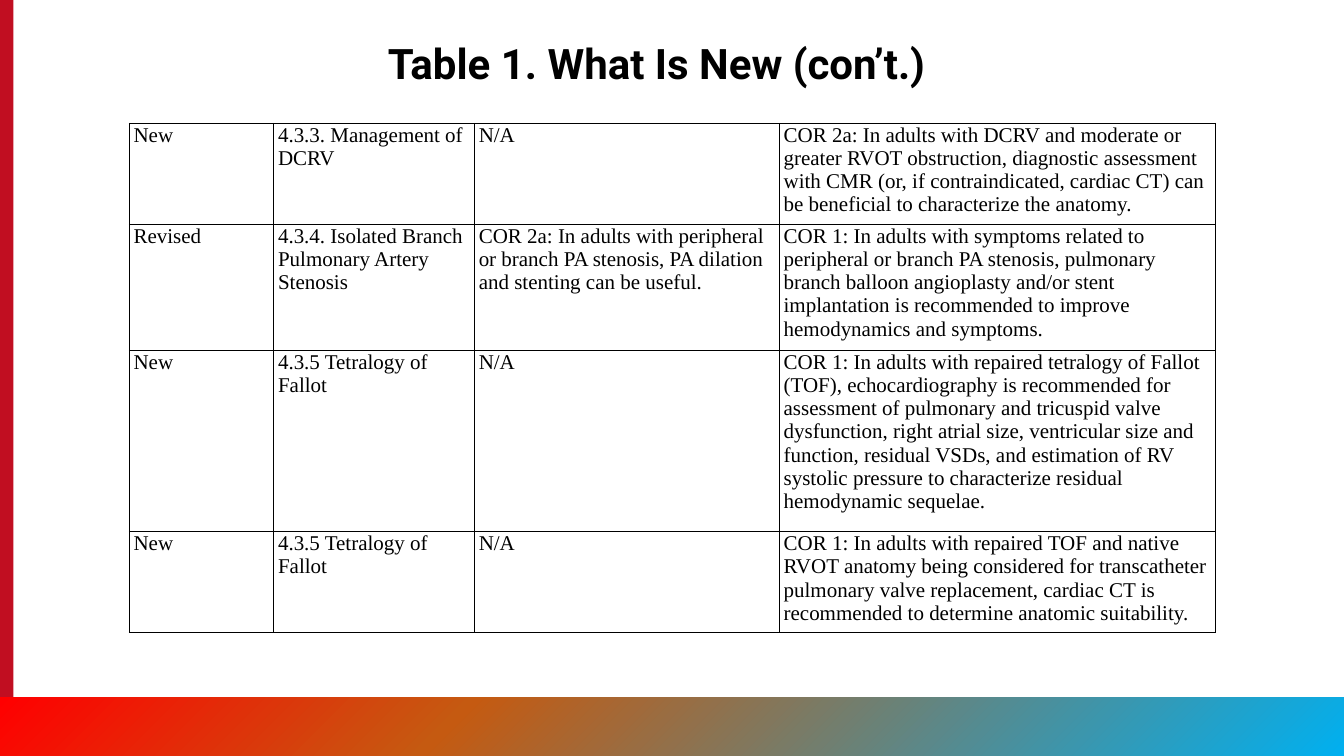
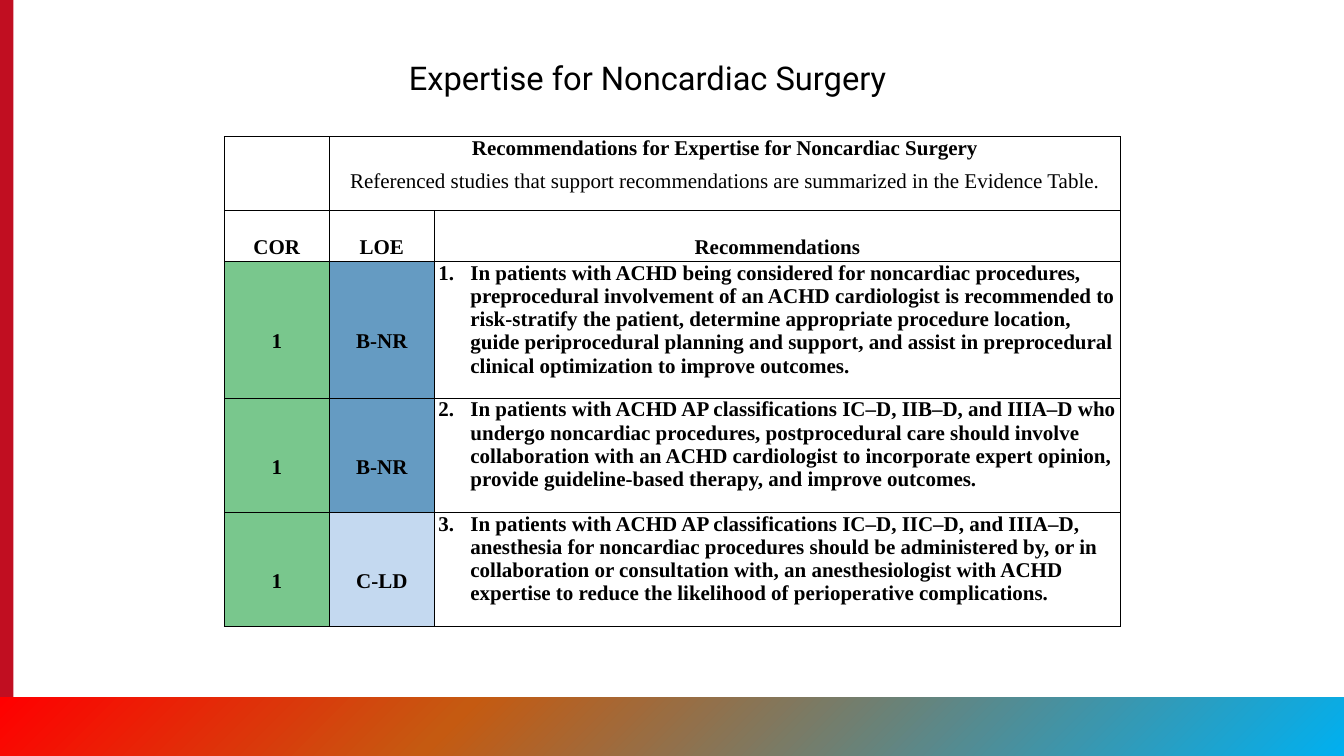
from lxml import etree
from pptx import Presentation
from pptx.dml.color import RGBColor
from pptx.enum.shapes import MSO_SHAPE
from pptx.enum.text import MSO_ANCHOR, MSO_AUTO_SIZE, PP_ALIGN
from pptx.oxml import parse_xml
from pptx.oxml.ns import qn
from pptx.util import Inches, Pt

RECTANGLE = MSO_SHAPE.RECTANGLE
TOP, MIDDLE, BOTTOM = MSO_ANCHOR.TOP, MSO_ANCHOR.MIDDLE, MSO_ANCHOR.BOTTOM
CENTER = PP_ALIGN.CENTER
FIT_SHAPE = MSO_AUTO_SIZE.SHAPE_TO_FIT_TEXT

TITLE_FONT = "Roboto"
TABLE_FONT = "Times New Roman"
BLACK = "000000"
SIDE_RED = "C10E21"
BAND_STOPS = [(0, "00B0F0"), (66, "C55A11"), (100, "FF0000")]
CLASS_GREEN = "79C78D"
LEVEL_COLOURS = {"B-NR": "659BC2", "C-LD": "C4D9F0"}
DRAWING_NS = "http://schemas.openxmlformats.org/drawingml/2006/main"

CHANGES = [
    ("New", "4.3.3. Management of DCRV", "N/A",
     "COR 2a: In adults with DCRV and moderate or greater RVOT obstruction, diagnostic "
     "assessment with CMR (or, if contraindicated, cardiac CT) can be beneficial to "
     "characterize the anatomy."),
    ("Revised", "4.3.4. Isolated Branch Pulmonary Artery Stenosis",
     "COR 2a: In adults with peripheral or branch PA stenosis, PA dilation and stenting "
     "can be useful.",
     "COR 1: In adults with symptoms related to peripheral or branch PA stenosis, "
     "pulmonary branch balloon angioplasty and/or stent implantation is recommended to "
     "improve hemodynamics and symptoms."),
    ("New", "4.3.5 Tetralogy of Fallot", "N/A",
     "COR 1: In adults with repaired tetralogy of Fallot (TOF), echocardiography is "
     "recommended for assessment of pulmonary and tricuspid valve dysfunction, right "
     "atrial size, ventricular size and function, residual VSDs, and estimation of RV "
     "systolic pressure to characterize residual hemodynamic sequelae."),
    ("New", "4.3.5 Tetralogy of Fallot", "N/A",
     "COR 1: In adults with repaired TOF and native RVOT anatomy being considered for "
     "transcatheter pulmonary valve replacement, cardiac CT is recommended to determine "
     "anatomic suitability."),
]

RECOMMENDATIONS = [
    ("1", "B-NR",
     "In patients with ACHD being considered for noncardiac procedures, preprocedural "
     "involvement of an ACHD cardiologist is recommended to risk-stratify the patient, "
     "determine appropriate procedure location, guide periprocedural planning and "
     "support, and assist in preprocedural clinical optimization to improve outcomes."),
    ("1", "B-NR",
     "In patients with ACHD AP classifications IC–D, IIB–D, and IIIA–D who undergo "
     "noncardiac procedures, postprocedural care should involve collaboration with an "
     "ACHD cardiologist to incorporate expert opinion, provide guideline-based therapy, "
     "and improve outcomes."),
    ("1", "C-LD",
     "In patients with ACHD AP classifications IC–D, IIC–D, and IIIA–D, anesthesia for "
     "noncardiac procedures should be administered by, or in collaboration or "
     "consultation with, an anesthesiologist with ACHD expertise to reduce the "
     "likelihood of perioperative complications."),
]


def rgb(colour):
    return RGBColor.from_string(colour)


def style_font(font, name, size, bold):
    font.name, font.size, font.bold = name, Pt(size), bold
    font.color.rgb = rgb(BLACK)


def add_block(slide, left, top, width, height, colour):
    block = slide.shapes.add_shape(
        RECTANGLE, Inches(left), Inches(top), Inches(width), Inches(height))
    block.shadow.inherit = False
    block.line.fill.background()
    block.fill.solid()
    block.fill.fore_color.rgb = rgb(colour)
    return block


def apply_gradient(shape, stops, angle):
    stop_xml = "".join(
        f'<a:gs pos="{percent * 1000}"><a:srgbClr val="{colour}"/></a:gs>'
        for percent, colour in stops)
    gradient = parse_xml(
        f'<a:gradFill xmlns:a="{DRAWING_NS}" rotWithShape="1"><a:gsLst>{stop_xml}'
        f'</a:gsLst><a:lin ang="{angle * 60000}" scaled="0"/></a:gradFill>')
    properties = shape.element.spPr
    properties.replace(properties.find(qn("a:solidFill")), gradient)


def add_branded_slide(prs):
    """Add a blank slide with the red side bar and the gradient footer band."""
    slide = prs.slides.add_slide(prs.slide_layouts[6])
    add_block(slide, 0, 0, 0.16, 9, SIDE_RED)
    footer = add_block(slide, 0, 8.3, 16, 0.7, SIDE_RED)
    footer.rotation = 180
    apply_gradient(footer, BAND_STOPS, 45)
    return slide


def add_title(slide, text, left, top, width, height, size, bold=False, anchor=TOP):
    title = slide.shapes.add_textbox(
        Inches(left), Inches(top), Inches(width), Inches(height))
    frame = title.text_frame
    frame.word_wrap = True
    frame.vertical_anchor = anchor
    frame.text = text
    style_font(frame.paragraphs[0].runs[0].font, TITLE_FONT, size, bold)
    return title


def format_cell(cell, fill=None):
    """Give a cell thin black borders, narrow insets and an optional fill."""
    properties = cell._tc.get_or_add_tcPr()
    for side in ("lnL", "lnR", "lnT", "lnB"):
        border = etree.SubElement(properties, qn(f"a:{side}"), w=str(Pt(1)))
        solid = etree.SubElement(border, qn("a:solidFill"))
        etree.SubElement(solid, qn("a:srgbClr"), val=BLACK)
    cell.margin_left = cell.margin_right = Inches(0.05)
    cell.margin_top = cell.margin_bottom = 0
    if fill:
        cell.fill.solid()
        cell.fill.fore_color.rgb = rgb(fill)
    else:
        cell.fill.background()


def add_grid(slide, left, top, widths, heights):
    table = slide.shapes.add_table(
        len(heights), len(widths), Inches(left), Inches(top),
        Inches(sum(widths)), Inches(sum(heights))).table
    table.first_row = table.horz_banding = False
    for column, width in zip(table.columns, widths):
        column.width = Inches(width)
    for row, height in zip(table.rows, heights):
        row.height = Inches(height)
    return table


def set_indent(paragraph, left, first):
    properties = paragraph._p.get_or_add_pPr()
    properties.set("marL", str(Inches(left)))
    properties.set("indent", str(Inches(first)))
    return properties


def style_paragraph(paragraph, bold=False):
    paragraph.space_after = Pt(8)
    for run in paragraph.runs:
        style_font(run.font, TABLE_FONT, 18, bold)


def center_paragraph(paragraph, bold=True):
    set_indent(paragraph, 0.24, -0.25)
    paragraph.alignment = CENTER
    style_paragraph(paragraph, bold)


def fill_label(cell, text):
    """Write a bold, double-spaced label in the middle of a cell."""
    cell.text = text
    cell.vertical_anchor = MIDDLE
    label = cell.text_frame.paragraphs[0]
    label.line_spacing = 2.0
    center_paragraph(label)


def fill_numbered(cell, text, number):
    cell.text = text
    item = cell.text_frame.paragraphs[0]
    properties = set_indent(item, 0.38, -0.38)
    etree.SubElement(properties, qn("a:buAutoNum"),
                     type="arabicPeriod", startAt=str(number))
    style_paragraph(item, bold=True)


def build_whats_new(prs):
    slide = add_branded_slide(prs)
    add_title(slide, "Table 1. What Is New (con’t.)", 4.52, 0.42, 6.96, 0.67, 36,
              bold=True, anchor=BOTTOM)
    table = add_grid(slide, 1.54, 1.47, [1.72, 2.39, 3.63, 5.19],
                     [1.18, 1.18, 2.16, 1.18])
    for row, change in zip(table.rows, CHANGES):
        for cell, text in zip(row.cells, change):
            format_cell(cell)
            cell.text = text
            style_paragraph(cell.text_frame.paragraphs[0])


def build_expertise(prs):
    slide = add_branded_slide(prs)
    title = add_title(slide, "Expertise for Noncardiac Surgery", 4.77, 0.64, 6.47, 0.57, 28)
    title.text_frame.auto_size = FIT_SHAPE
    table = add_grid(slide, 2.67, 1.63, [1.25, 1.25, 8.17],
                     [0.88, 0.51, 1.63, 1.36, 1.36])
    for column in range(3):
        for row in range(2):
            format_cell(table.cell(row, column))

    heading = table.cell(0, 1)
    heading.merge(table.cell(0, 2))
    heading.text = "Recommendations for Expertise for Noncardiac Surgery"
    center_paragraph(heading.text_frame.paragraphs[0])
    evidence_note = heading.text_frame.add_paragraph()
    evidence_note.text = ("Referenced studies that support recommendations are "
                          "summarized in the Evidence Table.")
    center_paragraph(evidence_note, bold=False)

    for column, label in enumerate(("COR", "LOE", "Recommendations")):
        fill_label(table.cell(1, column), label)
    for number, (cor, loe, advice) in enumerate(RECOMMENDATIONS, 1):
        cor_cell, loe_cell, advice_cell = table.rows[number + 1].cells
        format_cell(cor_cell, CLASS_GREEN)
        fill_label(cor_cell, cor)
        format_cell(loe_cell, LEVEL_COLOURS[loe])
        fill_label(loe_cell, loe)
        format_cell(advice_cell)
        fill_numbered(advice_cell, advice, number)


def main():
    prs = Presentation()
    prs.slide_width, prs.slide_height = Inches(16), Inches(9)
    build_whats_new(prs)
    build_expertise(prs)
    prs.save("out.pptx")


if __name__ == "__main__":
    main()
